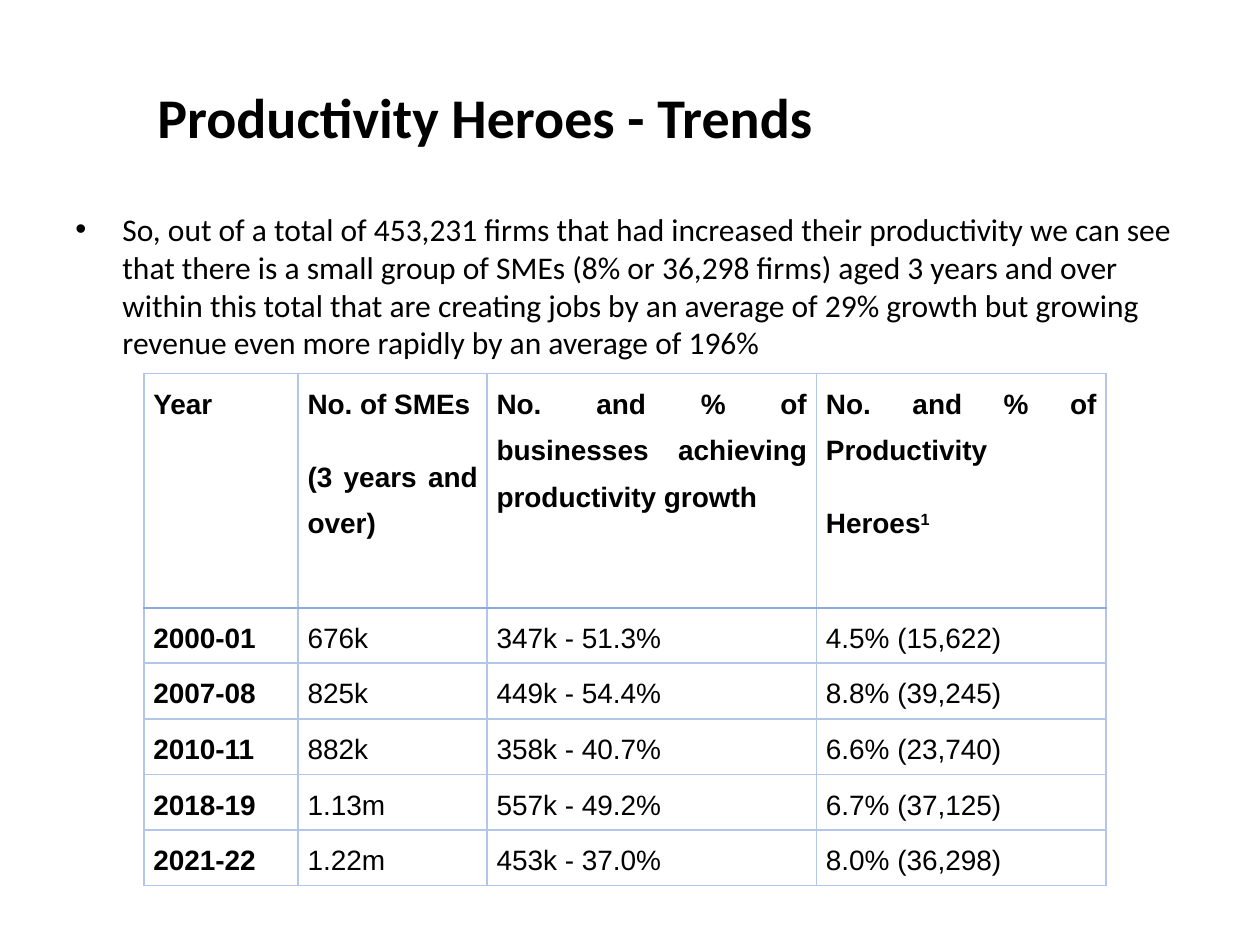
from lxml import etree
from pptx import Presentation
from pptx.dml.color import RGBColor
from pptx.enum.text import MSO_ANCHOR, PP_ALIGN
from pptx.oxml.ns import qn
from pptx.util import Cm, Pt

CENTER, LEFT, JUSTIFY = PP_ALIGN.CENTER, PP_ALIGN.LEFT, PP_ALIGN.JUSTIFY
TOP, MIDDLE = MSO_ANCHOR.TOP, MSO_ANCHOR.MIDDLE

COLORS = {"text": "000000", "grid": "B4C6E7", "header_rule": "8EAADB"}

TITLE = "Productivity Heroes - Trends"
SUMMARY = (
    "So, out of a total of 453,231 firms that had increased their productivity "
    "we can see that there is a small group of SMEs (8% or 36,298 firms) aged "
    "3 years and over within this total that are creating jobs by an average of "
    "29% growth but growing revenue even more rapidly by an average of 196%"
)
# Each cell is a list of paragraphs; "^" starts a superscript.
HEADER = [
    ["Year"],
    ["No. of SMEs", "(3 years and over)"],
    ["No. and % of businesses achieving productivity growth"],
    ["No. and % of Productivity", "Heroes^1"],
]
DATA = [
    ("2000-01", "676k", "347k - 51.3%", "4.5% (15,622)"),
    ("2007-08", "825k", "449k - 54.4%", "8.8% (39,245)"),
    ("2010-11", "882k", "358k - 40.7%", "6.6% (23,740)"),
    ("2018-19", "1.13m", "557k - 49.2%", "6.7% (37,125)"),
    ("2021-22", "1.22m", "453k - 37.0%", "8.0% (36,298)"),
]
COLUMN_WIDTHS = [3.11, 3.81, 6.64, 5.84]
HEADER_HEIGHT, ROW_HEIGHT = 4.72, 1.12
SUPERSCRIPT = "30000"


def add_run(paragraph, text, size, font_name, bold=False):
    run = paragraph.add_run()
    run.text = text
    run.font.size = Pt(size)
    run.font.name = font_name
    run.font.bold = bold
    run.font.color.rgb = RGBColor.from_string(COLORS["text"])
    return run


def add_text_box(slide, left, top, width, height, anchor, alignment):
    """Add a wrapping text box and return its first paragraph."""
    box = slide.shapes.add_textbox(Cm(left), Cm(top), Cm(width), Cm(height))
    box.text_frame.word_wrap = True
    box.text_frame.vertical_anchor = anchor
    paragraph = box.text_frame.paragraphs[0]
    paragraph.alignment = alignment
    return paragraph


def add_bullet(paragraph, indent):
    properties = paragraph._p.get_or_add_pPr()
    properties.set("marL", str(Cm(indent)))
    properties.set("indent", str(-Cm(indent)))
    etree.SubElement(properties, qn("a:buFont")).set("typeface", "Arial")
    etree.SubElement(properties, qn("a:buChar")).set("char", "•")


def set_border(cell, side, color, width):
    line = etree.SubElement(cell._tc.get_or_add_tcPr(), qn(f"a:ln{side}"))
    line.set("w", str(Pt(width)))
    fill = etree.SubElement(line, qn("a:solidFill"))
    etree.SubElement(fill, qn("a:srgbClr")).set("val", COLORS[color])


def fill_cell(cell, paragraphs, bold):
    cell.margin_left = cell.margin_right = Cm(0.19)
    cell.margin_top = cell.margin_bottom = 0
    frame = cell.text_frame
    for index, text in enumerate(paragraphs):
        paragraph = frame.add_paragraph() if index else frame.paragraphs[0]
        paragraph.alignment = JUSTIFY
        paragraph.line_spacing = 1.5
        paragraph.space_after = Pt(15)
        base, _, raised = text.partition("^")
        add_run(paragraph, base, 16, "Arial", bold)
        if raised:
            run = add_run(paragraph, raised, 16, "Arial", bold)
            run._r.get_or_add_rPr().set("baseline", SUPERSCRIPT)


def add_trend_table(slide, left, top):
    rows = [HEADER] + [[[text] for text in row] for row in DATA]
    heights = [HEADER_HEIGHT] + [ROW_HEIGHT] * len(DATA)
    table = slide.shapes.add_table(
        len(rows), len(COLUMN_WIDTHS), Cm(left), Cm(top),
        Cm(sum(COLUMN_WIDTHS)), Cm(sum(heights)),
    ).table
    table.first_row = table.horz_banding = False
    for column, width in zip(table.columns, COLUMN_WIDTHS):
        column.width = Cm(width)
    for row_index, (row, height) in enumerate(zip(rows, heights)):
        table.rows[row_index].height = Cm(height)
        for column_index, paragraphs in enumerate(row):
            cell = table.cell(row_index, column_index)
            fill_cell(cell, paragraphs, row_index == 0 or column_index == 0)
            header_side = {0: "B", 1: "T"}.get(row_index)
            for side in "LRTB":
                if side == header_side:
                    set_border(cell, side, "header_rule", 1.5)
                else:
                    set_border(cell, side, "grid", 1)
            cell.fill.background()


def main():
    presentation = Presentation()
    presentation.slide_width, presentation.slide_height = Cm(25.4), Cm(19.05)
    slide = presentation.slides.add_slide(presentation.slide_layouts[6])

    title = add_text_box(slide, 1.27, 0.76, 17.02, 3.18, MIDDLE, CENTER)
    add_run(title, TITLE, 32, "Calibri", bold=True)

    summary = add_text_box(slide, 1.27, 4.11, 22.86, 12.9, TOP, LEFT)
    add_bullet(summary, 0.95)
    add_run(summary, SUMMARY, 18, "Calibri")

    add_trend_table(slide, 2.9, 7.53)
    presentation.save("out.pptx")


if __name__ == "__main__":
    main()
